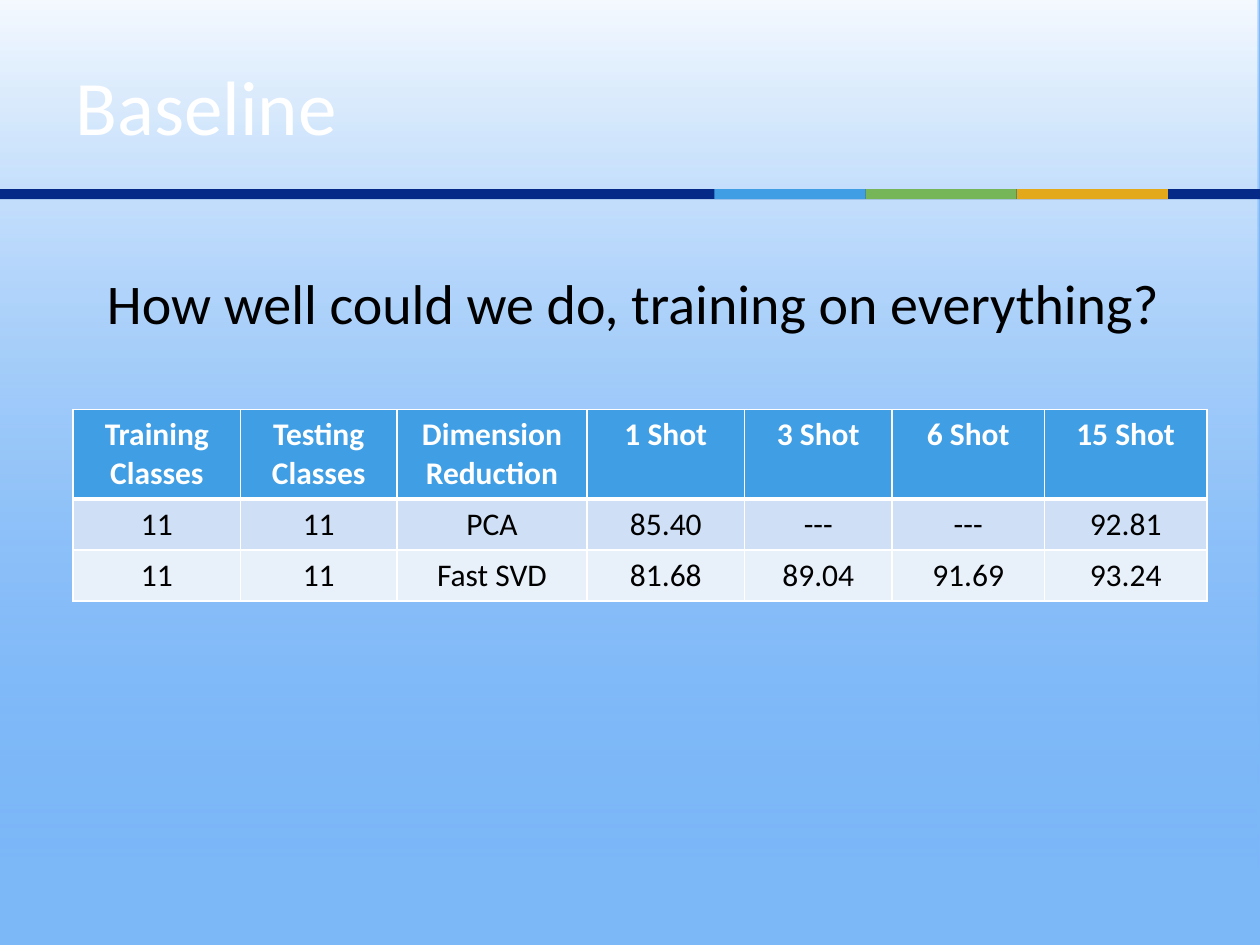
import pptx
import pptx.util
import pptx.dml.color
import pptx.enum.shapes
import pptx.enum.text
import pptx.oxml
import pptx.oxml.ns
from pptx.util import Inches

COLORS = {
    "sky": "7CB7F8", "white": "FFFFFF", "black": "000000",
    "navy": "042986", "blue": "3F9EE4", "green": "77B559", "gold": "E4A81B",
    "row_dark": "CFDFF5", "row_light": "E8F0FA",
}
FONT = "Calibri"


def rgb(name):
    return pptx.dml.color.RGBColor.from_string(COLORS[name])


def add_rectangle(slide, left, top, width, height):
    rectangle = slide.shapes.add_shape(
        pptx.enum.shapes.MSO_SHAPE.RECTANGLE,
        Inches(left), Inches(top), Inches(width), Inches(height))
    rectangle.shadow.inherit = False
    rectangle.line.fill.background()
    return rectangle


prs = pptx.Presentation()
prs.slide_width, prs.slide_height = Inches(10), Inches(7.5)
slide = prs.slides.add_slide(prs.slide_layouts[5])
slide.background.fill.solid()
slide.background.fill.fore_color.rgb = rgb("sky")

# Sky fading to white at the top
glow = add_rectangle(slide, -0.01, 0, 10, 6.88)
glow.fill.gradient()
glow.fill.gradient_angle = 90
stops = zip(glow.fill.gradient_stops, (0.01, 1), ("sky", "white"))
for stop, position, color in stops:
    stop.position = position
    stop.color.rgb = rgb(color)
stop_colors = glow._element.spPr.xpath(".//a:gs/a:srgbClr")
for stop_color, opacity in zip(stop_colors, (0, 92)):
    alpha = pptx.oxml.parse_xml(
        f'<a:alpha {pptx.oxml.ns.nsdecls("a")} val="{opacity * 1000}"/>')
    stop_color.append(alpha)

# Divider with three coloured segments
divider = [(0, 10, "navy"), (5.67, 1.2, "blue"), (6.87, 1.2, "green"), (8.07, 1.2, "gold")]
for left, width, color in divider:
    segment = add_rectangle(slide, left, 1.5, width, 0.08)
    segment.fill.solid()
    segment.fill.fore_color.rgb = rgb(color)

# Title, brought in front of the background shapes
title = slide.shapes.title
slide.shapes._spTree.append(title._element)
title.left, title.top = Inches(0.5), Inches(0.28)
title.width, title.height = Inches(9), Inches(1.1)
title.text_frame.text = "Baseline"
title.text_frame.vertical_anchor = pptx.enum.text.MSO_ANCHOR.MIDDLE
heading = title.text_frame.paragraphs[0]
heading.alignment = pptx.enum.text.PP_ALIGN.LEFT
heading.font.name = FONT
heading.font.size = pptx.util.Pt(44)
heading.font.color.rgb = rgb("white")

# Results table
results = [
    ["Training Classes", "Testing Classes", "Dimension Reduction",
     "1 Shot", "3 Shot", "6 Shot", "15 Shot"],
    ["11", "11", "PCA", "85.40", "---", "---", "92.81"],
    ["11", "11", "Fast SVD", "81.68", "89.04", "91.69", "93.24"],
]
column_widths = [1.33, 1.24, 1.51, 1.25, 1.17, 1.21, 1.29]
row_heights = [0.71, 0.4, 0.4]
row_fills = ["blue", "row_dark", "row_light"]
table = slide.shapes.add_table(
    len(results), len(column_widths),
    Inches(0.58), Inches(3.25), Inches(9), Inches(1.51)).table
for column, width in zip(table.columns, column_widths):
    column.width = Inches(width)
for row_index, values in enumerate(results):
    is_header = row_index == 0
    table.rows[row_index].height = Inches(row_heights[row_index])
    for column_index, value in enumerate(values):
        cell = table.cell(row_index, column_index)
        cell.text = value
        paragraph = cell.text_frame.paragraphs[0]
        paragraph.alignment = pptx.enum.text.PP_ALIGN.CENTER
        paragraph.font.name = FONT
        paragraph.font.size = pptx.util.Pt(18)
        paragraph.font.bold = is_header
        paragraph.font.color.rgb = rgb("white" if is_header else "black")
        borders = {"lnL": 1, "lnR": 1, "lnT": 3 if row_index == 1 else 1,
                   "lnB": 3 if is_header else 1}
        for side, points in borders.items():
            cell._tc.get_or_add_tcPr().append(pptx.oxml.parse_xml(
                f'<a:{side} {pptx.oxml.ns.nsdecls("a")} w="{pptx.util.Pt(points)}">'
                f'<a:solidFill><a:srgbClr val="{COLORS["white"]}"/></a:solidFill>'
                f'</a:{side}>'))
        cell.fill.solid()
        cell.fill.fore_color.rgb = rgb(row_fills[row_index])

# Question above the table
question = slide.shapes.add_textbox(
    Inches(0.75), Inches(2.08), Inches(8.59), Inches(0.64)).text_frame
question.word_wrap = False
question.auto_size = pptx.enum.text.MSO_AUTO_SIZE.SHAPE_TO_FIT_TEXT
question.text = "How well could we do, training on everything?"
question.paragraphs[0].font.name = FONT
question.paragraphs[0].font.size = pptx.util.Pt(32)
question.paragraphs[0].font.color.rgb = rgb("black")

prs.save("out.pptx")
